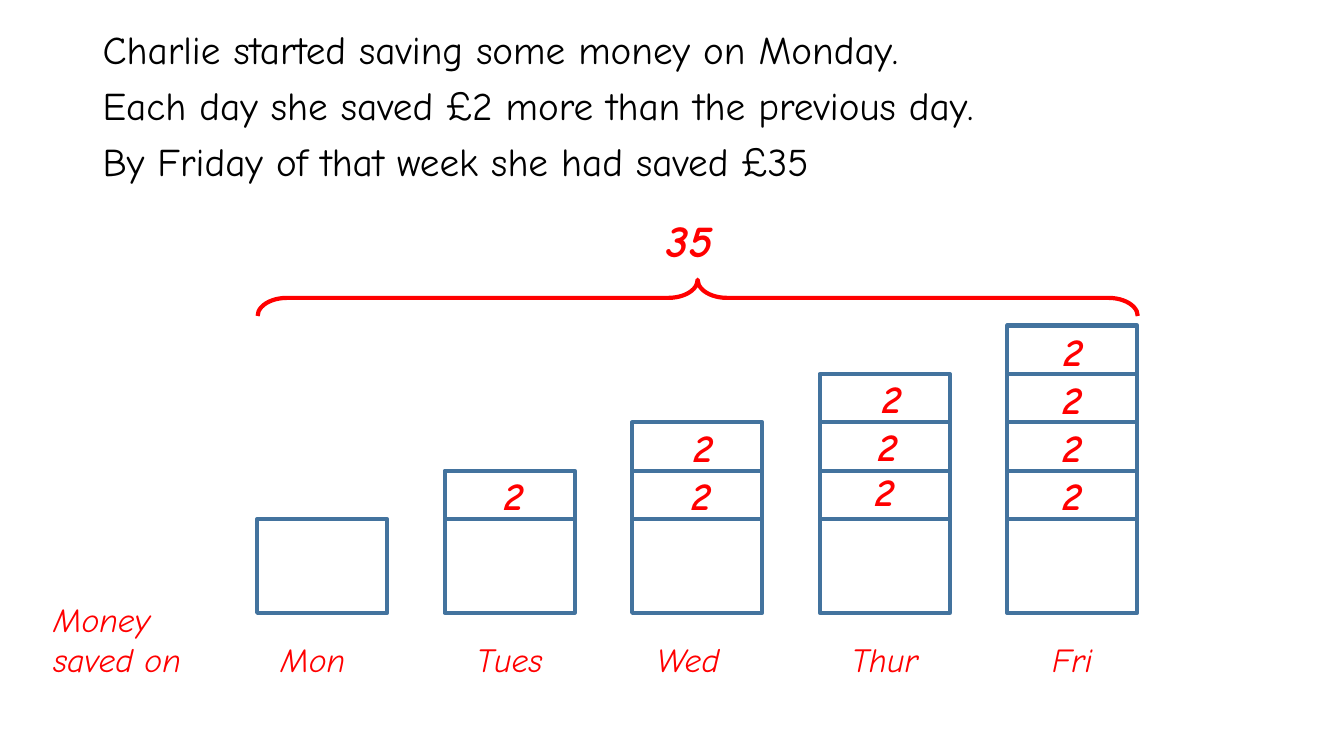
from dataclasses import dataclass

from pptx import Presentation
from pptx.dml.color import RGBColor
from pptx.enum.shapes import MSO_SHAPE as Shape
from pptx.enum.text import MSO_AUTO_SIZE as AutoSize, PP_ALIGN as Align
from pptx.util import Inches, Pt


@dataclass(frozen=True)
class Theme:
    font: str = "Comic Neue"
    text: RGBColor = RGBColor(0x00, 0x00, 0x00)
    answer: RGBColor = RGBColor(0xFF, 0x00, 0x00)
    bar: RGBColor = RGBColor(0x43, 0x73, 0x9E)
    day_size: Pt = Pt(24)
    body_size: Pt = Pt(28)
    total_size: Pt = Pt(32)
    line_width: Pt = Pt(3)


THEME = Theme()

PROBLEM = (
    "Charlie started saving some money on Monday.",
    "Each day she saved £2 more than the previous day.",
    "By Friday of that week she had saved £35",
)

# Day, left of its name, and the left and top of each "2" from the bottom up
DAYS = (
    ("Mon", 2.55, ()),
    ("Tues", 4.5, ((4.66, 4.63),)),
    ("Wed", 6.27, ((6.52, 4.63), (6.54, 4.15))),
    ("Thur", 8.22, ((8.34, 4.59), (8.37, 4.14), (8.41, 3.66))),
    ("Fri", 10.08, ((10.2, 4.63), (10.2, 4.15), (10.2, 3.67), (10.21, 3.2))),
)

BAR_LEFT, BAR_STEP, BAR_WIDTH = 2.55, 1.86, 1.29
BASE_TOP, BASE_HEIGHT, EXTRA_HEIGHT = 5.15, 0.93, 0.48


def add_run(paragraph, text, size, color, bold=False, italic=False):
    run = paragraph.add_run()
    run.text = text
    font = run.font
    font.name, font.size, font.bold, font.italic = THEME.font, size, bold, italic
    font.color.rgb = color


def add_text_frame(slide, left, top, width, height):
    box = slide.shapes.add_textbox(
        Inches(left), Inches(top), Inches(width), Inches(height))
    box.text_frame.word_wrap = True
    return box.text_frame


def add_problem(slide):
    frame = add_text_frame(slide, 0.92, 0.25, 11.5, 1.71)
    for index, sentence in enumerate(PROBLEM):
        paragraph = frame.add_paragraph() if index else frame.paragraphs[0]
        paragraph.line_spacing = 0.9
        paragraph.space_before = Pt(10)
        add_run(paragraph, sentence, THEME.body_size, THEME.text)


def add_label(slide, text, left, top, width, height, size,
              bold=False, align=Align.CENTER):
    """Add a red italic label."""
    frame = add_text_frame(slide, left, top, width, height)
    frame.auto_size = AutoSize.SHAPE_TO_FIT_TEXT
    paragraph = frame.paragraphs[0]
    paragraph.alignment = align
    add_run(paragraph, text, size, THEME.answer, bold, italic=True)


def add_outline(slide, kind, left, top, width, height, color):
    """Add an unfilled preset shape."""
    shape = slide.shapes.add_shape(
        kind, Inches(left), Inches(top), Inches(width), Inches(height))
    shape.shadow.inherit = False
    shape.fill.background()
    shape.line.color.rgb = color
    shape.line.width = THEME.line_width
    return shape


def add_bar(slide, left, extras):
    """Add Monday's amount with one smaller block per extra £2 above it."""
    add_outline(slide, Shape.RECTANGLE, left, BASE_TOP,
                BAR_WIDTH, BASE_HEIGHT, THEME.bar)
    for level in range(1, extras + 1):
        add_outline(slide, Shape.RECTANGLE, left, BASE_TOP - level * EXTRA_HEIGHT,
                    BAR_WIDTH, EXTRA_HEIGHT, THEME.bar)


def add_total(slide):
    brace = add_outline(slide, Shape.RIGHT_BRACE, 6.74, -1.41, 0.36, 8.73,
                        THEME.answer)
    brace.rotation = 270
    brace.adjustments[0] = 0.81
    brace.adjustments[1] = 0.5
    add_label(slide, "35", 6.51, 2.06, 0.87, 0.64, THEME.total_size,
              bold=True, align=Align.LEFT)


def main():
    presentation = Presentation()
    presentation.slide_width = Inches(13.33)
    presentation.slide_height = Inches(7.5)
    slide = presentation.slides.add_slide(presentation.slide_layouts[6])

    add_problem(slide)
    add_label(slide, "Money saved on", 0.43, 5.89, 1.91, 0.91,
              THEME.day_size, align=Align.LEFT)
    for index, (day, day_left, extras) in enumerate(DAYS):
        add_bar(slide, BAR_LEFT + index * BAR_STEP, len(extras))
        add_label(slide, day, day_left, 6.29, 1.11, 0.5, THEME.day_size)
        for left, top in extras:
            add_label(slide, "2", left, top, 0.87, 0.57, THEME.body_size, bold=True)
    add_total(slide)

    presentation.save("out.pptx")


if __name__ == "__main__":
    main()
